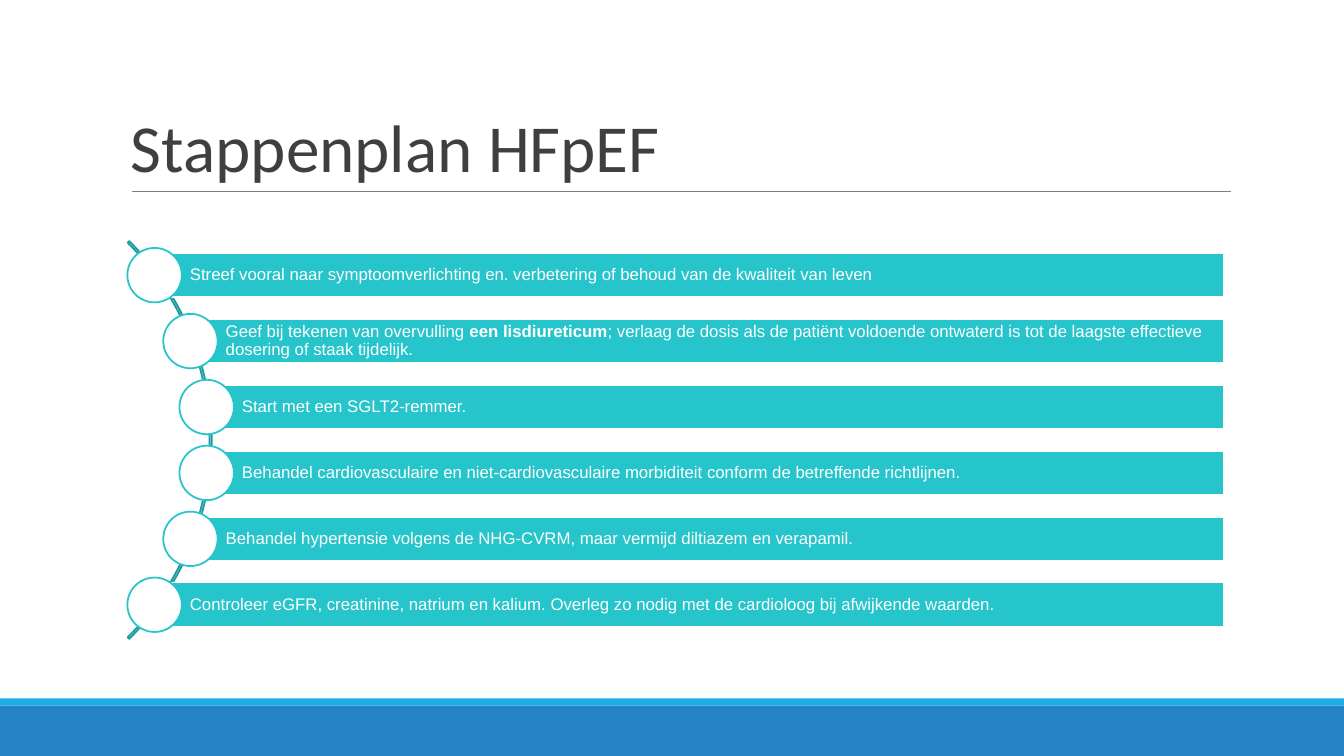
"""Build the HFpEF step plan slide on a grid of square cells, 0.1 inch each."""
import math

from lxml import etree
from pptx import Presentation, util as u
from pptx.dml import color
from pptx.enum import shapes, text
from pptx.oxml import ns

CELL = u.Inches(0.1)
COLUMNS, ROWS = 133.33, 75
BAR_RIGHT, BAR_HEIGHT, DOT = 121.45, 4.4, 5.4
ARC_X, ARC_Y, ARC_SIZE = -6.9, 43.65, 55.8
DOT_ORBIT, PITCH = 27.6, 6.54
TEAL, DARK_TEAL, WHITE = "26C4CB", "1C9AA1", "FFFFFF"

STEPS = [
    [("Streef vooral naar symptoomverlichting en. verbetering of behoud "
      "van de kwaliteit van leven", False)],
    [("Geef bij tekenen van overvulling ", False),
     ("een lisdiureticum", True),
     ("; verlaag de dosis als de patiënt voldoende ontwaterd is tot de "
      "laagste effectieve dosering of staak tijdelijk.", False)],
    [("Start met een SGLT2-remmer.", False)],
    [("Behandel cardiovasculaire en niet-cardiovasculaire morbiditeit "
      "conform de betreffende richtlijnen.", False)],
    [("Behandel hypertensie volgens de NHG-CVRM, maar vermijd diltiazem "
      "en verapamil.", False)],
    [("Controleer eGFR, creatinine, natrium en kalium. Overleg zo nodig "
      "met de cardioloog bij afwijkende waarden.", False)],
]


def rgb(value):
    """Turn a hex string into a colour."""
    return color.RGBColor.from_string(value)


def cells(*counts):
    """Turn counts of grid cells into lengths."""
    return [u.Emu(round(count * CELL)) for count in counts]


def add_figure(page, kind, area, fill=None, line=None):
    """Add a flat preset shape on the given grid area."""
    figure = page.shapes.add_shape(kind, *cells(*area))
    figure.shadow.inherit = False
    if fill:
        figure.fill.solid()
        figure.fill.fore_color.rgb = rgb(fill)
    else:
        figure.fill.background()
    if line:
        figure.line.color.rgb = rgb(line)
        figure.line.width = u.Pt(1.25)
    else:
        figure.line.fill.background()
    return figure


def write(box, spans, font, size, ink, spacing, anchor, insets):
    """Write one left-aligned paragraph of plain and bold spans."""
    frame = box.text_frame
    frame.word_wrap = True
    frame.vertical_anchor = anchor
    (frame.margin_left, frame.margin_top,
     frame.margin_right, frame.margin_bottom) = cells(*insets)
    para = frame.paragraphs[0]
    para.alignment = text.PP_ALIGN.LEFT
    para.line_spacing = spacing
    for words, bold in spans:
        span = para.add_run()
        span.text = words
        span.font.name = font
        span.font.size = u.Pt(size)
        span.font.bold = bold
        span.font.color.rgb = rgb(ink)


def add_title(page, words):
    """Add the title and the thin rule under it."""
    box = page.shapes.add_textbox(*cells(12, 3.1, 110, 15.9))
    write(box, [(words, False)], "Calibri", 48, "3F3F3F", 0.85,
          text.MSO_ANCHOR.BOTTOM, (1, 0.5, 1, 0.5))
    rule = page.shapes.add_connector(
        shapes.MSO_CONNECTOR.STRAIGHT, *cells(13.1, 19, 122.1, 19))
    rule.line.color.rgb = rgb("7F7F7F")
    rule.line.width = u.Pt(0.75)
    etree.SubElement(rule.element.spPr, ns.qn("a:effectLst"))


def add_arc(page):
    """Add the thin arc that links the steps."""
    area = (ARC_X - ARC_SIZE / 2, ARC_Y - ARC_SIZE / 2, ARC_SIZE, ARC_SIZE)
    arc = add_figure(page, shapes.MSO_SHAPE.BLOCK_ARC, area, line=DARK_TEAL)
    for index, value in enumerate((189, 27, 0.004)):
        arc.adjustments[index] = value


def add_step(page, index, spans):
    """Add a bar with its dot, both centred on the arc."""
    rise = (index - (len(STEPS) - 1) / 2) * PITCH
    x = ARC_X + math.sqrt(DOT_ORBIT ** 2 - rise ** 2)
    y = ARC_Y + rise
    bar = add_figure(page, shapes.MSO_SHAPE.RECTANGLE,
                     (x, y - BAR_HEIGHT / 2, BAR_RIGHT - x, BAR_HEIGHT),
                     TEAL, WHITE)
    write(bar, spans, "Arial", 12, WHITE, 0.9,
          text.MSO_ANCHOR.MIDDLE, (3.5, 0.3, 0.3, 0.3))
    add_figure(page, shapes.MSO_SHAPE.OVAL,
               (x - DOT / 2, y - DOT / 2, DOT, DOT), WHITE, TEAL)


def main():
    """Build and save the slide."""
    deck = Presentation()
    deck.slide_width, deck.slide_height = cells(COLUMNS, ROWS)
    page = deck.slides.add_slide(deck.slide_layouts[6])
    for top, height, fill in ((70, 5, "2683C6"), (69.3, 0.7, "1CADE4")):
        add_figure(page, shapes.MSO_SHAPE.RECTANGLE,
                   (0, top, COLUMNS, height), fill)
    add_title(page, "Stappenplan HFpEF")
    add_arc(page)
    for index, spans in enumerate(STEPS):
        add_step(page, index, spans)
    deck.save("out.pptx")


if __name__ == "__main__":
    main()
